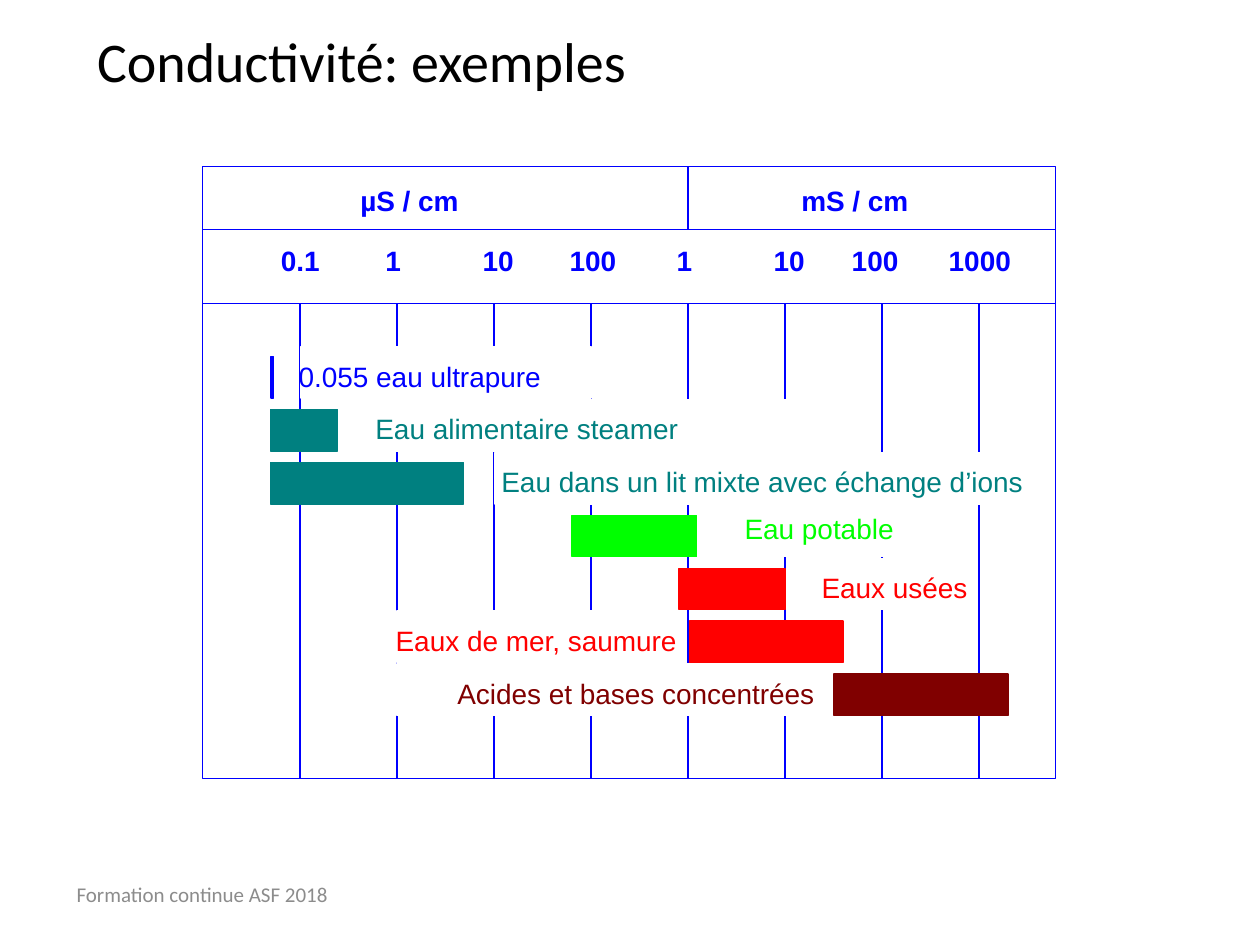
from pptx import Presentation
from pptx.util import Inches, Pt
from pptx.dml.color import RGBColor
from pptx.enum import shapes, text
from lxml import etree

BLUE = RGBColor(0, 0, 255)
TEAL = RGBColor(0, 128, 128)
GREEN = RGBColor(0, 255, 0)
RED = RGBColor(255, 0, 0)
MAROON = RGBColor(128, 0, 0)
WHITE = RGBColor(255, 255, 255)
BLACK = RGBColor(0, 0, 0)
GRAY = RGBColor(140, 140, 140)

deck = Presentation()
deck.slide_width, deck.slide_height = Inches(10), Inches(7.5)
slide = deck.slides.add_slide(deck.slide_layouts[5])
items = slide.shapes


def draw(kind, x, y, w, h, color, fill=None):
    """Draw a rule from x, y, or a filled box."""
    if kind == "rule":
        shape = items.add_connector(shapes.MSO_CONNECTOR.STRAIGHT, Inches(x), Inches(y),
                                    Inches(x + w), Inches(y + h))
        etree.SubElement(shape._element.spPr,
                         "{http://schemas.openxmlformats.org/drawingml/2006/main}effectLst")
    else:
        shape = items.add_shape(shapes.MSO_SHAPE.RECTANGLE, Inches(x), Inches(y),
                                Inches(w), Inches(h))
        shape.shadow.inherit = False
        shape.fill.solid()
        shape.fill.fore_color.rgb = fill
    shape.line.color.rgb = color
    shape.line.width = Pt(0.75)


def label(words, x, y, w, color, bold=False):
    """Write a label without margins, in a box with a little slack."""
    frame = items.add_textbox(Inches(x), Inches(y), Inches(w + 0.04), Inches(0.27)).text_frame
    frame.margin_left = frame.margin_right = frame.margin_top = frame.margin_bottom = 0
    frame.word_wrap = False
    frame.auto_size = text.MSO_AUTO_SIZE.SHAPE_TO_FIT_TEXT
    frame.text = words
    font = frame.paragraphs[0].runs[0].font
    font.name, font.size, font.bold = "Arial", Pt(16), bold
    font.color.rgb = color


# Title and footer
title = items.title
title.left, title.top = Inches(0.67), Inches(0.14)
title.width, title.height = Inches(6.97), Inches(0.67)
foot = items.add_textbox(Inches(0.51), Inches(6.9), Inches(2.83), Inches(0.4))
for box, words, size, color in [(title, "Conductivité: exemples", 32, BLACK),
                                (foot, "Formation continue ASF 2018", 12, GRAY)]:
    frame = box.text_frame
    frame.text = words
    frame.word_wrap = True
    frame.vertical_anchor = text.MSO_ANCHOR.MIDDLE
    frame.paragraphs[0].alignment = text.PP_ALIGN.LEFT
    font = frame.paragraphs[0].runs[0].font
    font.name, font.size = "Calibri", Pt(size)
    font.color.rgb = color

# Frame and decade grid
left, top, wide, high = 1.61, 1.32, 6.77, 4.86
draw("box", left, top, wide, high, BLUE, WHITE)
for i in range(8):
    draw("rule", 2.38 + 0.77 * i, 2.41, 0, 3.77, BLUE)

# Rows: label, its x and width, mask x and width, bar x and width, colour
rows = [
    ("0.055 eau ultrapure", 2.37, 1.95, 2.39, 2.3, 2.15, 0.02, BLUE),
    ("Eau alimentaire steamer", 2.98, 2.43, 2.93, 3.58, 2.15, 0.53, TEAL),
    ("Eau dans un lit mixte avec échange d’ions", 3.98, 4.19, 3.93, 4.07, 2.15, 1.53, TEAL),
    ("Eau potable", 5.91, 1.2, 5.77, 1.53, 4.54, 0.99, GREEN),
    ("Eaux usées", 6.52, 1.17, 6.47, 1.22, 5.39, 0.84, RED),
    ("Eaux de mer, saumure", 3.14, 2.34, 3.15, 2.22, 5.47, 1.22, RED),
    ("Acides et bases concentrées", 3.63, 2.87, 3.15, 3.38, 6.62, 1.38, MAROON),
]
step = 0.42

# White masks clear the grid behind the labels
for i, row in enumerate(rows):
    draw("box", row[3], 2.75 + step * i, row[4], 0.41, WHITE, WHITE)

# Bars and their labels
for i, (words, x, w, _, _, start, span, color) in enumerate(rows):
    draw("box", start, 2.83 + step * i, span, 0.33, color, color)
    y = 4.06 if words == "Eau potable" else 2.85 + step * i
    label(words, x, y, w, color)

# Header: units and scale
for y in (1.82, 2.41):
    draw("rule", left, y, wide, 0, BLUE)
draw("rule", 5.46, top, 0, 0.5, BLUE)
label("µS / cm", 2.86, 1.46, 0.78, BLUE, True)
label("mS / cm", 6.36, 1.46, 0.85, BLUE, True)
scale = [("0.1", 2.23, 0.31), ("1", 3.06, 0.12), ("10", 3.83, 0.25), ("100", 4.52, 0.37),
         ("1", 5.37, 0.12), ("10", 6.14, 0.25), ("100", 6.76, 0.37), ("1000", 7.53, 0.49)]
for words, x, w in scale:
    label(words, x, 1.93, w, BLUE, True)

deck.save("out.pptx")
